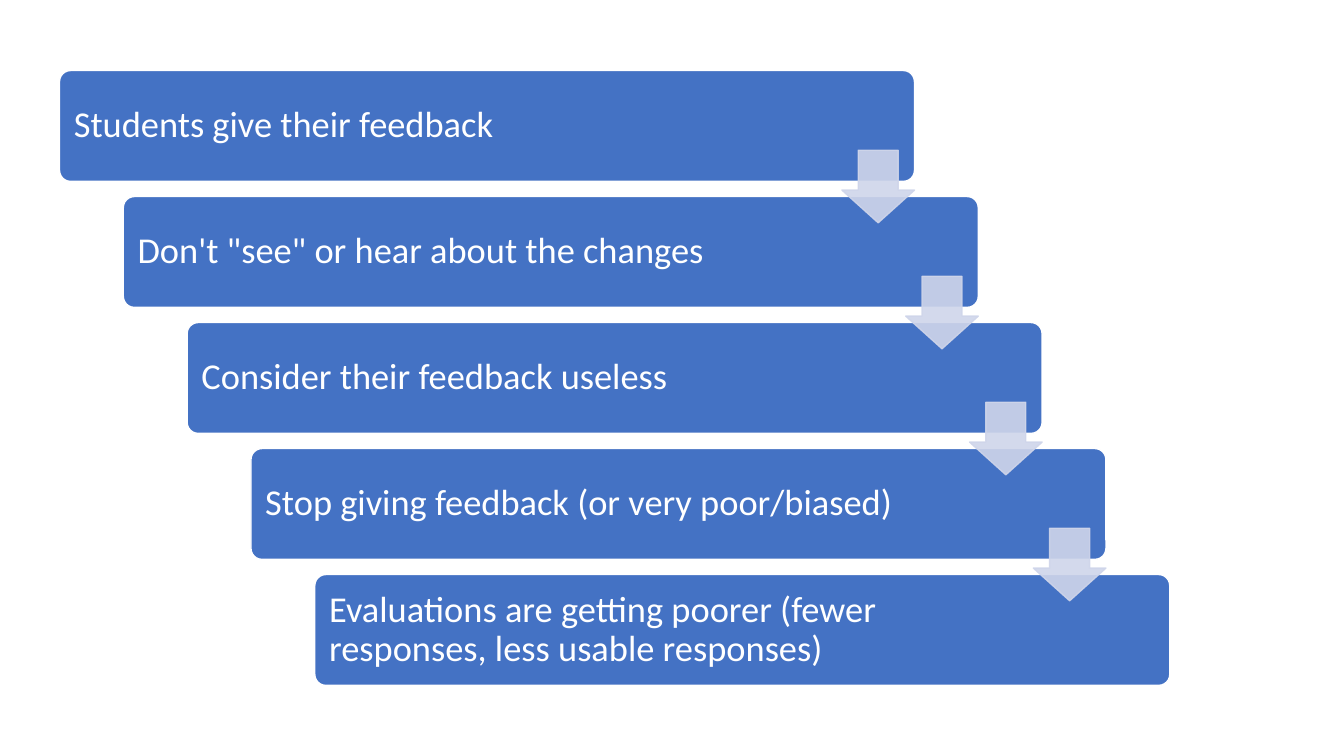
from lxml.etree import SubElement
from pptx import Presentation
from pptx.dml.color import RGBColor
from pptx.enum.shapes import MSO_SHAPE
from pptx.enum.text import MSO_ANCHOR, PP_ALIGN
from pptx.oxml.ns import qn
from pptx.util import Inches, Pt

BLUE = RGBColor(0x44, 0x72, 0xC4)
PALE = RGBColor(0xCF, 0xD5, 0xEA)
WHITE = RGBColor(0xFF, 0xFF, 0xFF)

STEPS = [
    "Students give their feedback",
    "Don't \"see\" or hear about the changes",
    "Consider their feedback useless",
    "Stop giving feedback (or very poor/biased)",
    "Evaluations are getting poorer (fewer responses, less usable responses)",
]
LEFT, TOP = 0.59, 0.7
SHIFT, DROP = 0.633, 1.25
WIDTH, HEIGHT = 8.48, 1.1
ARROW = 0.72


def write(frame, text, font="Calibri", size=26, color=WHITE, space=0.9):
    """Put one left-aligned paragraph in a text frame."""
    para = frame.paragraphs[0]
    para.alignment = PP_ALIGN.LEFT
    para.line_spacing = space
    run = para.add_run()
    run.text = text
    run.font.name = font
    run.font.size = Pt(size)
    run.font.color.rgb = color


class Stairs:
    """Draw the steps of a staircase and the arrows between them."""

    def __init__(self, slide):
        self.slide = slide

    def shape(self, kind, box, fill, line, adjust):
        """Add a flat preset shape."""
        item = self.slide.shapes.add_shape(kind, *map(Inches, box))
        item.shadow.inherit = False
        item.fill.solid()
        item.fill.fore_color.rgb = fill
        item.line.color.rgb = line
        item.line.width = Pt(1)
        for i, value in enumerate(adjust):
            item.adjustments[i] = value
        return item

    def step(self, left, top, text):
        """Add a rounded bar with its text kept clear of the arrows."""
        bar = self.shape(MSO_SHAPE.ROUNDED_RECTANGLE, (left, top, WIDTH, HEIGHT),
                         BLUE, WHITE, [0.1])
        frame = bar.text_frame
        frame.word_wrap = True
        frame.vertical_anchor = MSO_ANCHOR.MIDDLE
        frame.margin_left = frame.margin_top = frame.margin_bottom = Inches(0.11)
        frame.margin_right = Inches(1.46)
        write(frame, text)

    def arrow(self, left, top):
        """Add a slightly transparent down arrow."""
        item = self.shape(MSO_SHAPE.DOWN_ARROW, (left, top, ARROW, ARROW),
                          PALE, PALE, [0.55, 0.45])
        for color in item._element.spPr.iter(qn("a:srgbClr")):
            SubElement(color, qn("a:alpha"), val="90000")


def main():
    """Build and save the slide."""
    deck = Presentation()
    deck.slide_width, deck.slide_height = Inches(13.33), Inches(7.5)
    stairs = Stairs(deck.slides.add_slide(deck.slide_layouts[6]))
    spots = [(LEFT + i * SHIFT, TOP + i * DROP) for i in range(len(STEPS))]
    for (left, top), text in zip(spots, STEPS):
        stairs.step(left, top, text)
    for left, top in spots[:-1]:
        stairs.arrow(left + WIDTH - ARROW, top + 0.79)
    deck.save("out.pptx")


if __name__ == "__main__":
    main()
